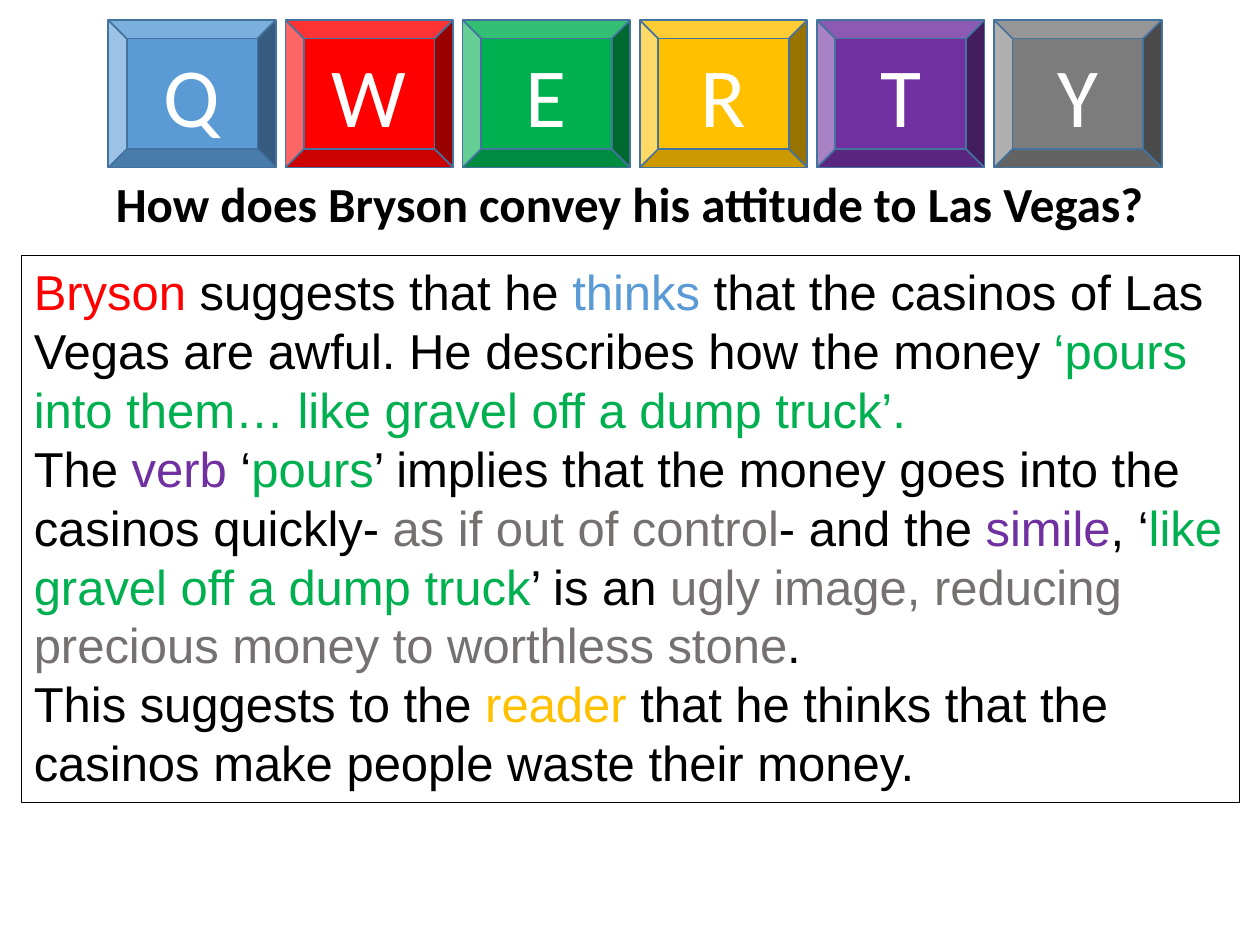
from pptx import Presentation
from pptx.dml.color import RGBColor
from pptx.enum.shapes import MSO_SHAPE
from pptx.enum.text import MSO_ANCHOR, MSO_AUTO_SIZE, PP_ALIGN
from pptx.util import Inches, Pt

COLOURS = {
    "blue": "5B9BD5", "red": "FF0000", "green": "00B050", "gold": "FFC000",
    "purple": "7030A0", "key grey": "7C7C7C", "text grey": "767171",
    "outline": "43739E", "black": "000000", "white": "FFFFFF",
}

# Content
KEYS = [("Q", "blue"), ("W", "red"), ("E", "green"),
        ("R", "gold"), ("T", "purple"), ("Y", "key grey")]
QUESTION = "How does Bryson convey his attitude to Las Vegas?"
ANSWER = [
    [("Bryson", "red"), (" suggests that he ", "black"), ("thinks", "blue"),
     (" that the casinos of Las Vegas are awful. He describes how the money ", "black"),
     ("‘pours into them… like gravel off a dump truck’.", "green")],
    [("The ", "black"), ("verb", "purple"), (" ‘", "black"), ("pours", "green"),
     ("’ implies that the money goes into the casinos quickly- ", "black"),
     ("as if out of control", "text grey"), ("- and the ", "black"),
     ("simile", "purple"), (", ‘", "black"),
     ("like gravel off a dump truck", "green"), ("’ is an ", "black"),
     ("ugly image, reducing precious money to worthless stone", "text grey"),
     (".", "black")],
    [("This suggests to the ", "black"), ("reader", "gold"),
     (" that he thinks that the casinos make people waste their money.", "black")],
]

# Layout in inches
WIDTH, HEIGHT = 10, 7.5
KEY_LEFT, KEY_TOP, KEY_WIDTH, KEY_HEIGHT = 0.86, 0.16, 1.33, 1.17
KEY_PITCH = 1.406
QUESTION_BOX = (0.35, KEY_TOP + KEY_HEIGHT, 9.29, 0.57)
ANSWER_BOX = (0.17, 2.03, 9.67, 4.34)

# Text formats
KEY_FONT = {"name": "Calibri", "size": Pt(48), "bold": False}
QUESTION_FONT = {"name": "Calibri", "size": Pt(28), "bold": True}
ANSWER_FONT = {"name": "Arial", "size": Pt(28), "bold": False}


def colour(name):
    return RGBColor.from_string(COLOURS[name])


def place(shape, box):
    for side, value in zip(("left", "top", "width", "height"), box):
        setattr(shape, side, Inches(value))


def set_frame(shape, anchor):
    frame = shape.text_frame
    settings = {"word_wrap": True, "auto_size": MSO_AUTO_SIZE.NONE,
                "vertical_anchor": anchor}
    for name, value in settings.items():
        setattr(frame, name, value)
    return frame


def add_span(para, text, font, colour_name):
    span = para.add_run()
    span.text = text
    for name, value in font.items():
        setattr(span.font, name, value)
    span.font.color.rgb = colour(colour_name)


def add_key(page, column, letter, fill):
    key = page.shapes.add_shape(MSO_SHAPE.BEVEL, 0, 0, 0, 0)
    place(key, (KEY_LEFT + column * KEY_PITCH, KEY_TOP, KEY_WIDTH, KEY_HEIGHT))
    key.shadow.inherit = False
    key.fill.solid()
    key.fill.fore_color.rgb = colour(fill)
    key.line.color.rgb = colour("outline")
    key.line.width = Pt(1)
    para = set_frame(key, MSO_ANCHOR.MIDDLE).paragraphs[0]
    para.alignment = PP_ALIGN.CENTER
    add_span(para, letter, KEY_FONT, "white")


def main():
    deck = Presentation()
    deck.slide_width, deck.slide_height = Inches(WIDTH), Inches(HEIGHT)
    page = deck.slides.add_slide(deck.slide_layouts[5])

    # Row of keyboard keys
    for column, (letter, fill) in enumerate(KEYS):
        add_key(page, column, letter, fill)

    # Question as the title
    title = page.shapes.title
    place(title, QUESTION_BOX)
    para = set_frame(title, MSO_ANCHOR.TOP).paragraphs[0]
    para.alignment = PP_ALIGN.CENTER
    add_span(para, QUESTION, QUESTION_FONT, "black")

    # Colour-coded answer
    box = page.shapes.add_textbox(0, 0, 0, 0)
    place(box, ANSWER_BOX)
    box.line.color.rgb = colour("black")
    box.line.width = Pt(0.75)
    frame = set_frame(box, MSO_ANCHOR.TOP)
    for index, spans in enumerate(ANSWER):
        para = frame.add_paragraph() if index else frame.paragraphs[0]
        for text, colour_name in spans:
            add_span(para, text, ANSWER_FONT, colour_name)

    deck.save("out.pptx")


if __name__ == "__main__":
    main()
